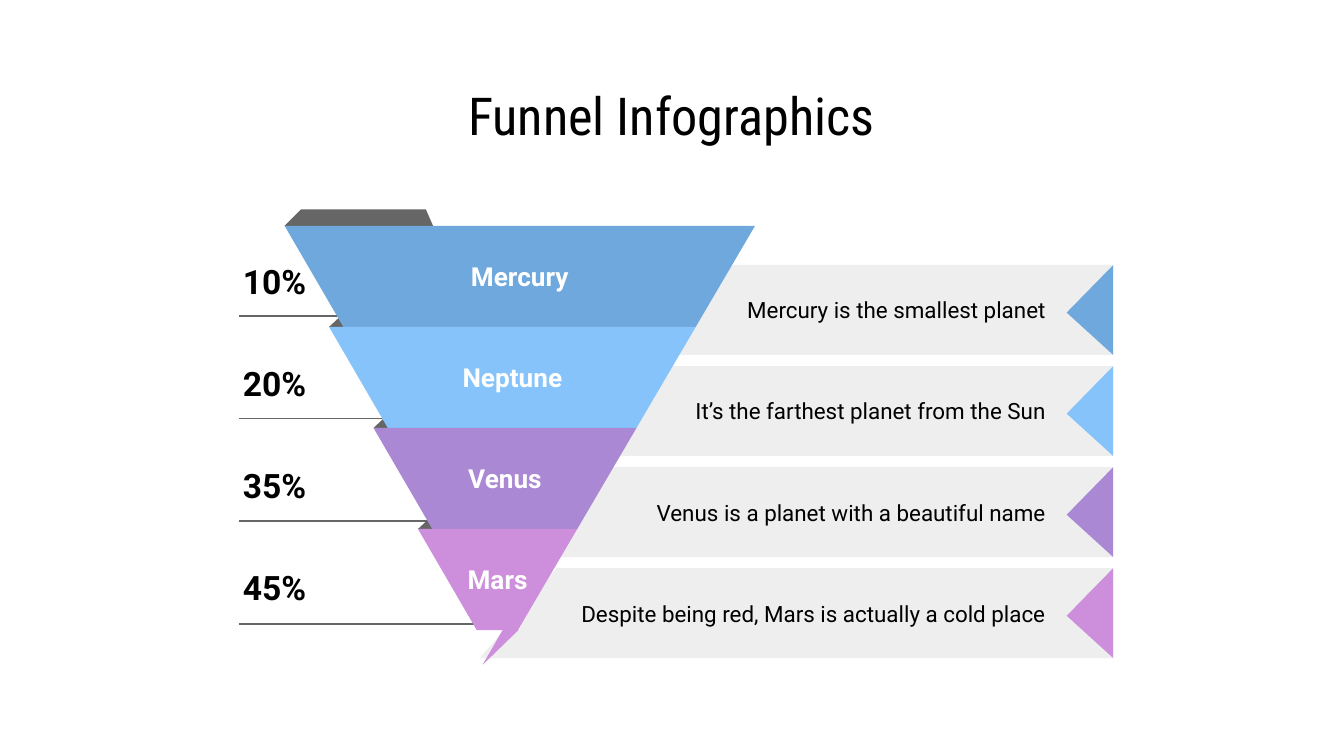
"""Build a four-stage funnel slide with percentages and descriptions."""
from typing import NamedTuple, Optional

from lxml.etree import SubElement
from pptx import Presentation
from pptx.dml.color import RGBColor
from pptx.enum.shapes import MSO_CONNECTOR
from pptx.enum.text import MSO_ANCHOR, PP_ALIGN
from pptx.oxml.ns import qn
from pptx.util import Cm, Pt

BLACK = RGBColor(0x00, 0x00, 0x00)
WHITE = RGBColor(0xFF, 0xFF, 0xFF)
GREY = RGBColor(0x66, 0x66, 0x66)
PALE = RGBColor(0xEE, 0xEE, 0xEE)
BLUE = RGBColor(0x6F, 0xA8, 0xDC)
SKY = RGBColor(0x85, 0xC3, 0xFA)
VIOLET = RGBColor(0xAB, 0x88, 0xD3)
PINK = RGBColor(0xCD, 0x8F, 0xDB)

FUNNEL_LEFT, FUNNEL_RIGHT, FUNNEL_TOP = 5.38, 14.27, 4.27
STEP, LEFT_STEP, RIGHT_STEP, SLANT = 1.91, 0.84, 1.12, 1.11
BAND_LEFT, BAND_RIGHT, BAND_TOP, BAND_HEIGHT = 9.07, 21.04, 5.01, 1.7
RULE_LEFT, RULE_TOP, RULE_STEP = 4.52, 5.97, 1.94
SHARE_LEFT, SHARE_TOP, SHARE_STEP = 4.34, 4.88, 1.93

Points = list[tuple[float, float]]


class Stage(NamedTuple):
    name: str
    share: str
    note: str
    color: RGBColor
    rule_end: float


class Style(NamedTuple):
    size: float
    color: RGBColor
    bold: bool = False
    align: PP_ALIGN = PP_ALIGN.LEFT
    font: str = "Roboto"
    right_inset: float = 0.25


TITLE = Style(28, BLACK, align=PP_ALIGN.CENTER, font="Roboto Condensed")
NAME = Style(14, WHITE, True, PP_ALIGN.CENTER)
NOTE = Style(12, BLACK, align=PP_ALIGN.RIGHT, right_inset=1.27)
SHARE = Style(18, BLACK, True)

STAGES = [
    Stage("Mercury", "10%", "Mercury is the smallest planet", BLUE, 6.55),
    Stage("Neptune", "20%", "It’s the farthest planet from the Sun", SKY, 7.29),
    Stage("Venus", "35%", "Venus is a planet with a beautiful name", VIOLET, 8.36),
    Stage("Mars", "45%", "Despite being red, Mars is actually a cold place", PINK, 9.53),
]


def write(sp, text: str, style: Style) -> None:
    """Put one styled line of text in a shape."""
    tf = sp.text_frame
    frame_format = {
        "word_wrap": True,
        "vertical_anchor": MSO_ANCHOR.MIDDLE,
        "margin_left": Cm(0.25),
        "margin_top": Cm(0.25),
        "margin_right": Cm(style.right_inset),
        "margin_bottom": Cm(0.25),
    }
    for key, value in frame_format.items():
        setattr(tf, key, value)
    p = tf.paragraphs[0]
    p.alignment = style.align
    r = p.add_run()
    r.text = text
    font_format = {"name": style.font, "size": Pt(style.size), "bold": style.bold}
    for key, value in font_format.items():
        setattr(r.font, key, value)
    r.font.color.rgb = style.color


def add_text(s, left: float, top: float, width: float, height: float,
             text: str, style: Style) -> None:
    """Add a text box."""
    write(s.shapes.add_textbox(Cm(left), Cm(top), Cm(width), Cm(height)), text, style)


def add_polygon(s, points: Points, color: RGBColor, text: str = "",
                style: Optional[Style] = None) -> None:
    """Add a filled polygon, with text if a style is given."""
    start, *rest = [(Cm(x), Cm(y)) for x, y in points]
    builder = s.shapes.build_freeform(*start)
    builder.add_line_segments(rest, close=True)
    sp = builder.convert_to_shape()
    sp.shadow.inherit = False
    sp.fill.solid()
    sp.fill.fore_color.rgb = color
    sp.line.fill.background()
    if style:
        write(sp, text, style)


def add_rule(s, left: float, right: float, y: float) -> None:
    """Add a thin horizontal line."""
    line = s.shapes.add_connector(MSO_CONNECTOR.STRAIGHT, Cm(right), Cm(y), Cm(left), Cm(y))
    line.line.color.rgb = GREY
    line.line.width = Pt(0.98)
    SubElement(line._element.spPr, qn("a:effectLst"))


def add_fold(s, i: int) -> None:
    """Add the dark corner behind the top left of a lower stage."""
    x, y = FUNNEL_LEFT + i * LEFT_STEP, FUNNEL_TOP + i * STEP
    add_polygon(s, [(x + 0.3, y - 0.28), (x, y), (x + 0.3, y)], GREY)


def add_stage(s, i: int, stage: Stage) -> None:
    """Add one funnel level with its rule, band, arrow and share."""
    left, right = FUNNEL_LEFT + i * LEFT_STEP, FUNNEL_RIGHT - i * RIGHT_STEP
    top = FUNNEL_TOP + i * STEP
    bottom = top + STEP
    band_top = BAND_TOP + i * STEP
    band_bottom = band_top + BAND_HEIGHT

    add_rule(s, RULE_LEFT, stage.rule_end, RULE_TOP + i * RULE_STEP)
    add_polygon(s, [(BAND_LEFT + 1.45, band_top), (BAND_LEFT, band_bottom),
                    (BAND_RIGHT, band_bottom), (BAND_RIGHT, band_top)],
                PALE, stage.note, NOTE)
    add_polygon(s, [(left, top), (left + SLANT, bottom),
                    (right - RIGHT_STEP, bottom), (right, top)],
                stage.color, stage.name, NAME)
    add_polygon(s, [(BAND_RIGHT - 0.88, band_top + 0.9), (BAND_RIGHT, band_bottom),
                    (BAND_RIGHT, band_top)], stage.color)
    add_text(s, SHARE_LEFT, SHARE_TOP + i * SHARE_STEP, 1.83, 0.86, stage.share, SHARE)


def main() -> None:
    """Build and save the slide."""
    prs = Presentation()
    prs.slide_width, prs.slide_height = Cm(25.4), Cm(14.29)
    s = prs.slides.add_slide(prs.slide_layouts[6])

    for i in range(1, len(STAGES)):
        add_fold(s, i)
    add_polygon(s, [(5.69, 3.96), (5.38, 4.27), (5.69, 4.27),
                    (6.38, 5.77), (8.84, 5.77), (8.05, 3.96)], GREY)
    for i, stage in enumerate(STAGES):
        add_stage(s, i, stage)
    add_polygon(s, [(9.5, 11.91), (9.12, 12.57), (9.8, 11.91)], PINK)
    add_text(s, 7.92, 1.5, 9.53, 1.35, "Funnel Infographics", TITLE)

    prs.save("out.pptx")


if __name__ == "__main__":
    main()
